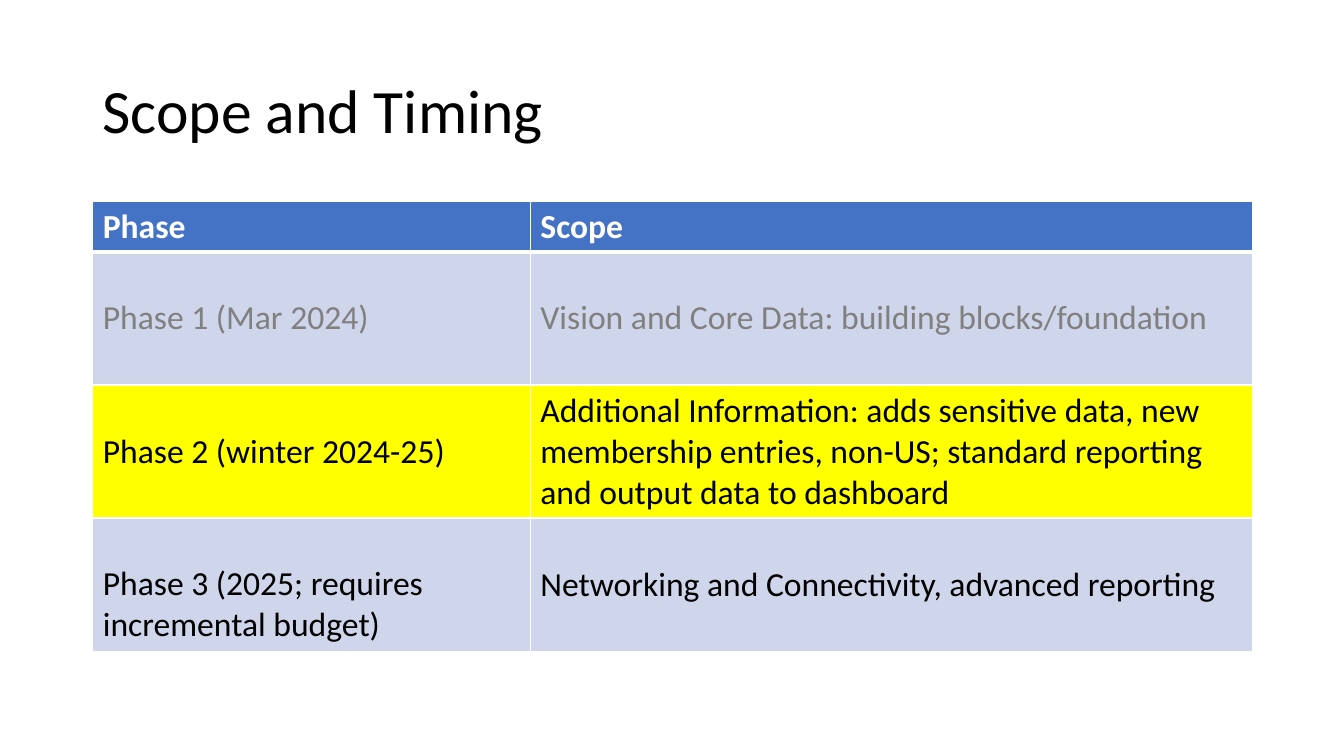
from dataclasses import dataclass

from lxml.etree import SubElement
from pptx import Presentation
from pptx.dml.color import RGBColor
from pptx.enum.text import MSO_ANCHOR as ANCHOR
from pptx.oxml.ns import qn
from pptx.util import Inches, Pt


@dataclass(frozen=True)
class Theme:
    font: str = "Calibri"
    title_size: int = 44
    table_size: int = 24
    text: str = "000000"
    muted: str = "808080"
    white: str = "FFFFFF"
    header: str = "4472C4"
    band: str = "CFD5EA"
    highlight: str = "FFFF00"
    rule: int = 1
    header_rule: int = 3


THEME = Theme()
COLUMN_WIDTHS = (4.34, 7.16)
HEADER_HEIGHT = 0.5
HEADINGS = ("Phase", "Scope")
# Phase, scope, text colour, fill, anchor of the phase cell
PHASES = (
    ("Phase 1 (Mar 2024)",
     "Vision and Core Data: building blocks/foundation",
     THEME.muted, THEME.band, ANCHOR.MIDDLE),
    ("Phase 2 (winter 2024-25)",
     "Additional Information: adds sensitive data, new membership entries, "
     "non-US; standard reporting and output data to dashboard",
     THEME.text, THEME.highlight, ANCHOR.MIDDLE),
    ("Phase 3 (2025; requires incremental budget)",
     "Networking and Connectivity, advanced reporting",
     THEME.text, THEME.band, ANCHOR.BOTTOM),
)


def add_run(p, text, size, color, bold=False):
    r = p.add_run()
    r.text = text
    r.font.name = THEME.font
    r.font.size = Pt(size)
    r.font.bold = bold
    r.font.color.rgb = RGBColor.from_string(color)


def set_borders(cell, widths):
    """Draw white cell borders; widths are points for left, right, top, bottom."""
    tc_pr = cell._tc.get_or_add_tcPr()
    for side, width in zip("LRTB", widths):
        ln = SubElement(tc_pr, qn(f"a:ln{side}"), w=str(Pt(width)))
        fill = SubElement(ln, qn("a:solidFill"))
        SubElement(fill, qn("a:srgbClr"), val=THEME.white)


def fill_cell(cell, text, color, fill, borders, anchor=ANCHOR.MIDDLE, bold=False):
    set_borders(cell, borders)
    cell.fill.solid()
    cell.fill.fore_color.rgb = RGBColor.from_string(fill)
    cell.vertical_anchor = anchor
    add_run(cell.text_frame.paragraphs[0], text, THEME.table_size, color, bold)


def add_title(slide, left, top, width, height):
    tf = slide.shapes.add_textbox(
        Inches(left), Inches(top), Inches(width), Inches(height)).text_frame
    tf.word_wrap = True
    tf.vertical_anchor = ANCHOR.MIDDLE
    p = tf.paragraphs[0]
    p.line_spacing = 0.9
    add_run(p, "Scope and Timing", THEME.title_size, THEME.text)


def add_phase_table(slide, left, top, width, height):
    table = slide.shapes.add_table(
        len(PHASES) + 1, len(HEADINGS),
        Inches(left), Inches(top), Inches(width), Inches(height)).table
    for column, share in zip(table.columns, COLUMN_WIDTHS):
        column.width = Inches(width * share / sum(COLUMN_WIDTHS))
    for row in table.rows:
        row.height = Inches((height - HEADER_HEIGHT) / len(PHASES))
    table.rows[0].height = Inches(HEADER_HEIGHT)

    thin, thick = THEME.rule, THEME.header_rule
    for col, heading in enumerate(HEADINGS):
        fill_cell(table.cell(0, col), heading, THEME.white, THEME.header,
                  (thin, thin, thin, thick), ANCHOR.TOP, bold=True)
    for row, (phase, scope, color, fill, anchor) in enumerate(PHASES, 1):
        borders = (thin, thin, thick if row == 1 else thin, thin)
        fill_cell(table.cell(row, 0), phase, color, fill, borders, anchor)
        fill_cell(table.cell(row, 1), scope, color, fill, borders)


def main():
    prs = Presentation()
    prs.slide_width, prs.slide_height = Inches(13.33), Inches(7.5)
    slide = prs.slides.add_slide(prs.slide_layouts[6])
    add_title(slide, 0.92, 0.4, 11.5, 1.45)
    add_phase_table(slide, 0.92, 2, 11.5, 4.46)
    prs.save("out.pptx")


if __name__ == "__main__":
    main()
